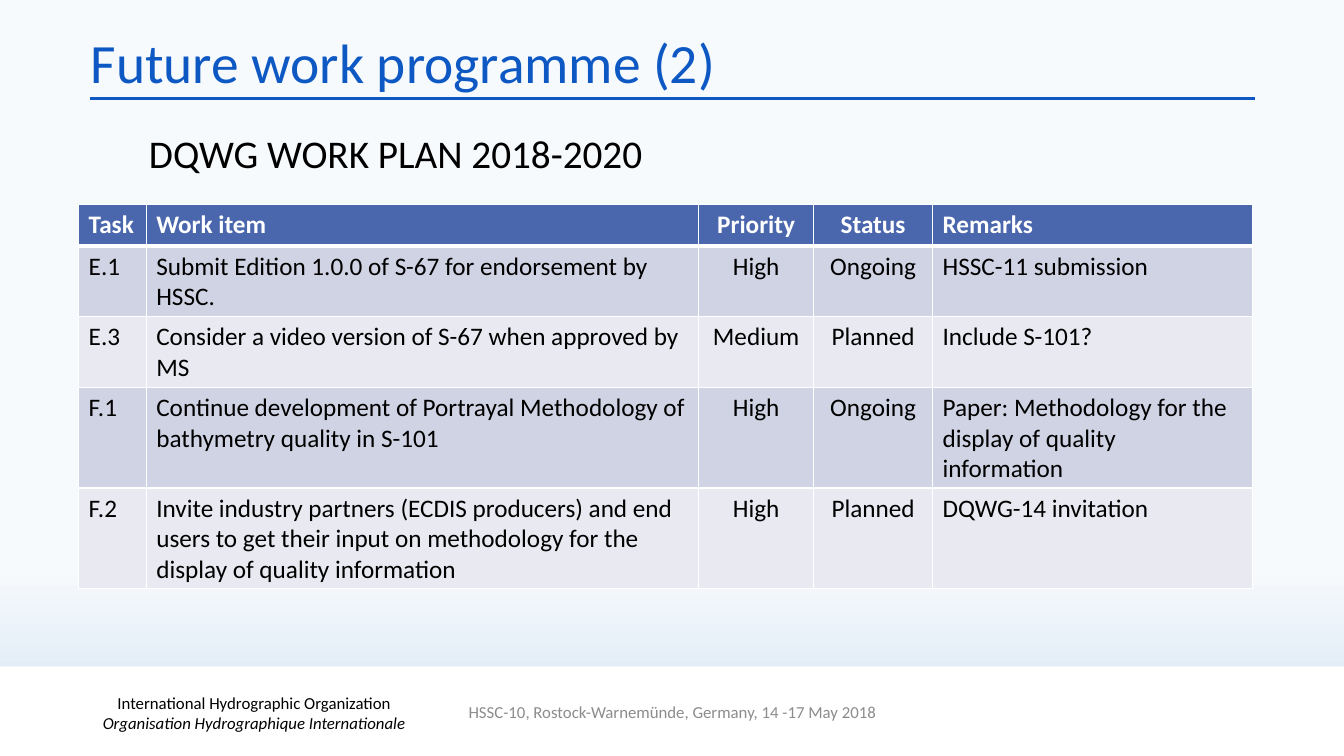
from dataclasses import dataclass

from lxml import etree
from pptx import Presentation
from pptx import util as u
from pptx.dml.color import RGBColor
from pptx.enum import shapes, text
from pptx.oxml import ns


@dataclass(frozen=True)
class Theme:
    """Colours, font and type sizes of the slide."""
    font: str = "Calibri"
    accent: str = "0E58C4"
    ink: str = "000000"
    muted: str = "8C8C8C"
    white: str = "FFFFFF"
    header: str = "4A66AC"
    bands: tuple = ("D0D3E3", "E9EAF1")
    backdrop: tuple = ((0.75, "F7FAFD"), (1.0, "D0E2F1"))
    title_size: float = 39.6
    subtitle_size: float = 28
    table_size: float = 18
    footer_size: float = 12


class SlideBuilder:
    """Adds styled elements to one slide, placed in percent of its size."""

    def __init__(self, presentation, theme):
        self.theme = theme
        self.width = presentation.slide_width
        self.height = presentation.slide_height
        self.slide = presentation.slides.add_slide(presentation.slide_layouts[5])

    def across(self, share):
        return u.Emu(round(self.width * share / 100))

    def down(self, share):
        return u.Emu(round(self.height * share / 100))

    def box(self, left, top, width, height):
        return self.across(left), self.down(top), self.across(width), self.down(height)

    def background(self):
        fill = self.slide.background.fill
        fill.gradient()
        fill.gradient_angle = 270
        for stop, (position, colour) in zip(fill.gradient_stops, self.theme.backdrop):
            stop.position = position
            stop.color.rgb = RGBColor.from_string(colour)

    def style(self, paragraph, size, colour, align=text.PP_ALIGN.LEFT, bold=False):
        paragraph.alignment = align
        for run in paragraph.runs:
            run.font.name = self.theme.font
            run.font.size = u.Pt(size)
            run.font.bold = bold
            run.font.color.rgb = RGBColor.from_string(colour)

    def title(self, wording, area):
        shape = self.slide.shapes.title
        shape.left, shape.top, shape.width, shape.height = self.box(*area)
        frame = shape.text_frame
        frame.text = wording
        frame.auto_size = text.MSO_AUTO_SIZE.NONE
        frame.vertical_anchor = text.MSO_ANCHOR.MIDDLE
        frame.paragraphs[0].line_spacing = 0.9
        self.style(frame.paragraphs[0], self.theme.title_size, self.theme.accent)

    def rule(self, left, right, top):
        line = self.slide.shapes.add_connector(
            shapes.MSO_CONNECTOR.STRAIGHT, self.across(left), self.down(top),
            self.across(right), self.down(top))
        line.line.color.rgb = RGBColor.from_string(self.theme.accent)
        line.line.width = u.Pt(2.25)
        properties = line._element.find(ns.qn("p:spPr"))
        etree.SubElement(properties, ns.qn("a:effectLst"))

    def band(self, area):
        shape = self.slide.shapes.add_shape(shapes.MSO_SHAPE.RECTANGLE, *self.box(*area))
        shape.shadow.inherit = False
        shape.fill.solid()
        shape.fill.fore_color.rgb = RGBColor.from_string(self.theme.white)
        shape.line.fill.background()

    def label(self, wording, area, size, colour, align, anchor):
        frame = self.slide.shapes.add_textbox(*self.box(*area)).text_frame
        frame.word_wrap = True
        frame.vertical_anchor = anchor
        frame.text = wording
        self.style(frame.paragraphs[0], size, colour, align)
        return frame.paragraphs[0]

    def borders(self, cell, top, bottom):
        properties = cell._tc.get_or_add_tcPr()
        sides = (("L", 1), ("R", 1), ("T", top), ("B", bottom))
        for index, (side, points) in enumerate(sides):
            edge = etree.Element(ns.qn(f"a:ln{side}"), w=str(u.Pt(points)))
            fill = etree.SubElement(edge, ns.qn("a:solidFill"))
            etree.SubElement(fill, ns.qn("a:srgbClr"), val=self.theme.white)
            properties.insert(index, edge)

    def table(self, rows, left, top, widths, row_height, centred):
        area = (left, top, sum(widths), row_height * len(rows))
        table = self.slide.shapes.add_table(
            len(rows), len(widths), *self.box(*area)).table
        for column, width in zip(table.columns, widths):
            column.width = self.across(width)
        for row_index, wordings in enumerate(rows):
            table.rows[row_index].height = self.down(row_height)
            heading = row_index == 0
            fill = self.theme.header if heading else self.theme.bands[(row_index - 1) % 2]
            colour = self.theme.white if heading else self.theme.ink
            for column_index, wording in enumerate(wordings):
                cell = table.cell(row_index, column_index)
                cell.text_frame.text = wording
                cell.fill.solid()
                cell.fill.fore_color.rgb = RGBColor.from_string(fill)
                self.borders(cell, 3 if row_index == 1 else 1, 3 if heading else 1)
                align = text.PP_ALIGN.CENTER if column_index in centred else text.PP_ALIGN.LEFT
                self.style(cell.text_frame.paragraphs[0], self.theme.table_size,
                           colour, align, heading)


WORK_PLAN = (
    ("Task", "Work item", "Priority", "Status", "Remarks"),
    ("E.1", "Submit Edition 1.0.0 of S-67 for endorsement by HSSC.",
     "High", "Ongoing", "HSSC-11 submission"),
    ("E.3", "Consider a video version of S-67 when approved by MS",
     "Medium", "Planned", "Include S-101?"),
    ("F.1", "Continue development of Portrayal Methodology of bathymetry quality in S-101",
     "High", "Ongoing", "Paper: Methodology for the display of quality information"),
    ("F.2", "Invite industry partners (ECDIS producers) and end users to get their input "
     "on methodology for the display of quality information",
     "High", "Planned", "DQWG-14 invitation"),
)


def main():
    presentation = Presentation()
    presentation.slide_width = u.Inches(13.33)
    presentation.slide_height = u.Inches(7.5)
    theme = Theme()
    builder = SlideBuilder(presentation, theme)
    centre, middle = text.PP_ALIGN.CENTER, text.MSO_ANCHOR.MIDDLE

    builder.background()
    builder.rule(6.68, 93.4, 13.07)
    builder.band((0, 88.13, 100, 11.87))
    organization = builder.label(
        "International Hydrographic Organization\vOrganisation Hydrographique Internationale",
        (2.03, 91.6, 33.76, 5.33), theme.footer_size, theme.ink, centre, middle)
    organization.runs[1].font.italic = True
    builder.title("Future work programme (2)", (6, 4, 73.67, 9.33))
    builder.table(WORK_PLAN, 5.85, 27.07, (5.03, 41.11, 8.55, 8.85, 23.78), 5.47, (2, 3))
    builder.label("HSSC-10, Rostock-Warnemünde, Germany, 14 -17 May 2018",
                  (33.16, 91.47, 33.76, 5.33), theme.footer_size, theme.muted, centre, middle)
    builder.label("DQWG WORK PLAN 2018-2020", (10.35, 16.4, 61.74, 7.6),
                  theme.subtitle_size, theme.ink, text.PP_ALIGN.LEFT, text.MSO_ANCHOR.TOP)
    presentation.save("out.pptx")


if __name__ == "__main__":
    main()
